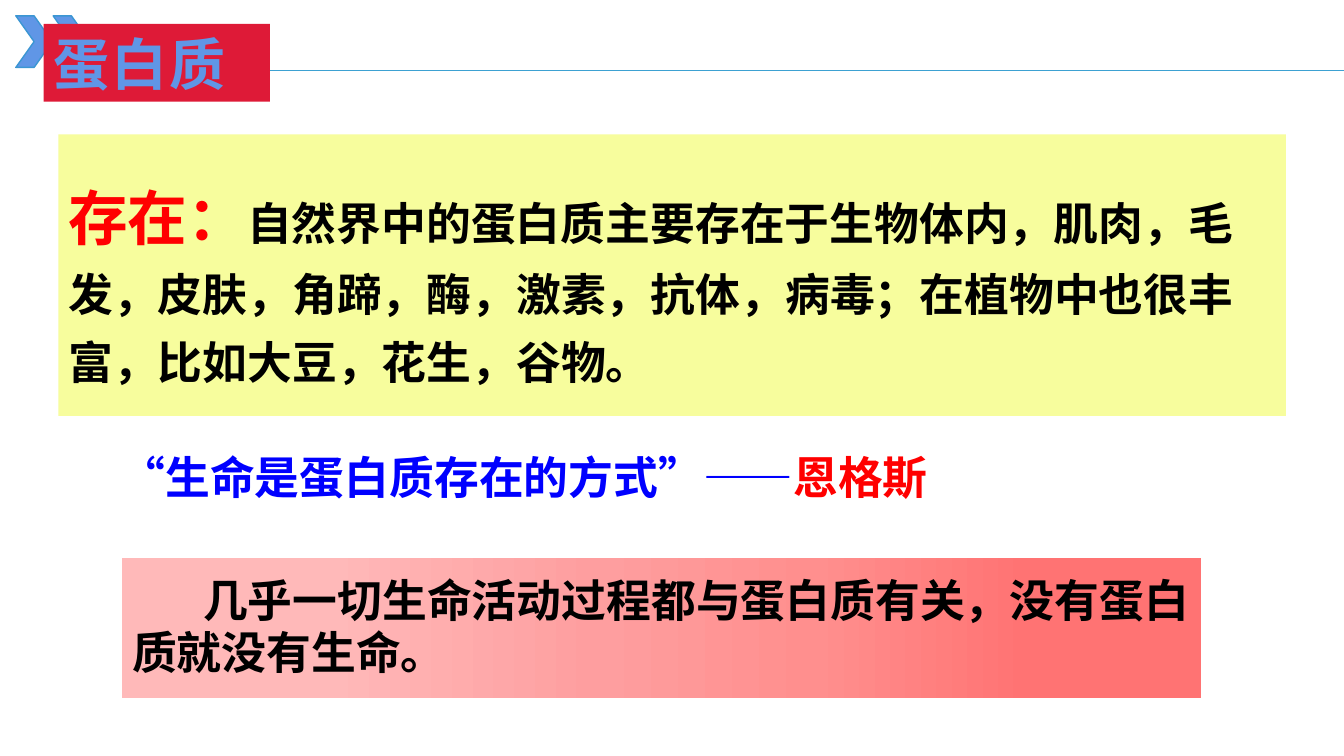
from lxml import etree
from pptx import Presentation
from pptx.dml.color import RGBColor
from pptx.enum.lang import MSO_LANGUAGE_ID
from pptx.enum.shapes import MSO_CONNECTOR, MSO_SHAPE
from pptx.enum.text import MSO_ANCHOR
from pptx.oxml.ns import qn
from pptx.util import Cm, Pt

RECT, CHEVRON = MSO_SHAPE.RECTANGLE, MSO_SHAPE.CHEVRON
STRAIGHT = MSO_CONNECTOR.STRAIGHT
MIDDLE, TOP = MSO_ANCHOR.MIDDLE, MSO_ANCHOR.TOP
CHINESE = MSO_LANGUAGE_ID.SIMPLIFIED_CHINESE
FONT = "Noto Sans CJK SC"
COLORS = {
    "sky": "6096E6", "edge": "3B96D3", "rule": "3DA1D2", "crimson": "DE1A37",
    "yellow": "F7FD9D", "red": "FF0000", "blue": "0000FF", "black": "000000",
}
PINKS = [(19, "FFB9B9"), (44, "FE9E9F"), (64, "FF8F8E"), (84, "FF7373")]


def rgb(name):
    return RGBColor.from_string(COLORS[name])


class SlideBuilder:
    def __init__(self, slide, font):
        self.slide = slide
        self.font = font

    def shape(self, kind, x, y, w, h, fill=None, line=None):
        sp = self.slide.shapes.add_shape(kind, Cm(x), Cm(y), Cm(w), Cm(h))
        sp.shadow.inherit = False
        if fill:
            sp.fill.solid()
            sp.fill.fore_color.rgb = rgb(fill)
        if line:
            sp.line.color.rgb = rgb(line)
            sp.line.width = Pt(1)
        else:
            sp.line.fill.background()
        return sp

    def gradient(self, sp, stops):
        sp.fill.gradient()
        sp.fill.gradient_angle = 0
        stop_list = sp.fill._fill._gradFill.find(qn("a:gsLst"))
        for old in list(stop_list):
            stop_list.remove(old)
        for position, color in stops:
            gs = etree.SubElement(stop_list, qn("a:gs"), pos=str(position * 1000))
            etree.SubElement(gs, qn("a:srgbClr"), val=color)

    def line(self, x1, y1, x2, y2, color, width):
        cn = self.slide.shapes.add_connector(STRAIGHT, Cm(x1), Cm(y1), Cm(x2), Cm(y2))
        cn.line.color.rgb = rgb(color)
        cn.line.width = Pt(width)
        etree.SubElement(cn._element.spPr, qn("a:effectLst"))

    def textbox(self, x, y, w, h):
        return self.slide.shapes.add_textbox(Cm(x), Cm(y), Cm(w), Cm(h))

    def text(self, sp, runs, spacing=1.0, indent=0, tracking=0, anchor=MIDDLE):
        tf = sp.text_frame
        tf.word_wrap = True
        tf.vertical_anchor = anchor
        p = tf.paragraphs[0]
        p.line_spacing = spacing
        pPr = p._p.get_or_add_pPr()
        pPr.set("algn", "l")
        pPr.set("indent", str(Cm(indent)))
        for text, size, color in runs:
            r = p.add_run()
            r.text = text
            r.font.size = Pt(size)
            r.font.bold = True
            r.font.name = self.font
            r.font.language_id = CHINESE
            r.font.color.rgb = rgb(color)
            rPr = r._r.get_or_add_rPr()
            etree.SubElement(rPr, qn("a:ea"), typeface=self.font)
            if tracking:
                rPr.set("spc", str(int(tracking * 100)))


prs = Presentation()
prs.slide_width, prs.slide_height = Cm(33.87), Cm(19.05)
s = SlideBuilder(prs.slides.add_slide(prs.slide_layouts[6]), FONT)

# Header ornament
for i in range(2):
    s.shape(CHEVRON, 0.4 + i * 0.94, 0.4, 0.92, 1.3, "sky", "edge")
s.line(2.62, 1.78, 33.87, 1.78, "rule", 0.5)

# Importance of proteins
importance = s.shape(RECT, 3.08, 14.06, 27.2, 3.53)
s.gradient(importance, PINKS)
s.text(importance, [("几乎一切生命活动过程都与蛋白质有关，没有蛋白质就没有生命。", 32, "black")],
       spacing=0.97, indent=1.79)

# Quotation
quote = s.textbox(2.79, 11.46, 26.42, 1.63)
s.text(quote, [("“生命是蛋白质存在的方式”——", 32, "blue"), ("恩格斯", 32, "red")],
       spacing=0.82, anchor=TOP)

# Occurrence in nature
occurrence = s.shape(RECT, 1.47, 3.39, 30.94, 7.09, "yellow")
s.text(occurrence, [
    ("存在：", 42.6, "red"),
    ("自然界中的蛋白质主要存在于生物体内，肌肉，毛发，皮肤，角蹄，酶，"
     "激素，抗体，病毒；在植物中也很丰富，比如大豆，花生，谷物。", 32, "black"),
], spacing=1.26)

# Title
title = s.shape(RECT, 1.1, 0.6, 5.7, 1.96, "crimson")
s.text(title, [("蛋白质", 40, "sky")], tracking=1.5)

prs.save("out.pptx")
